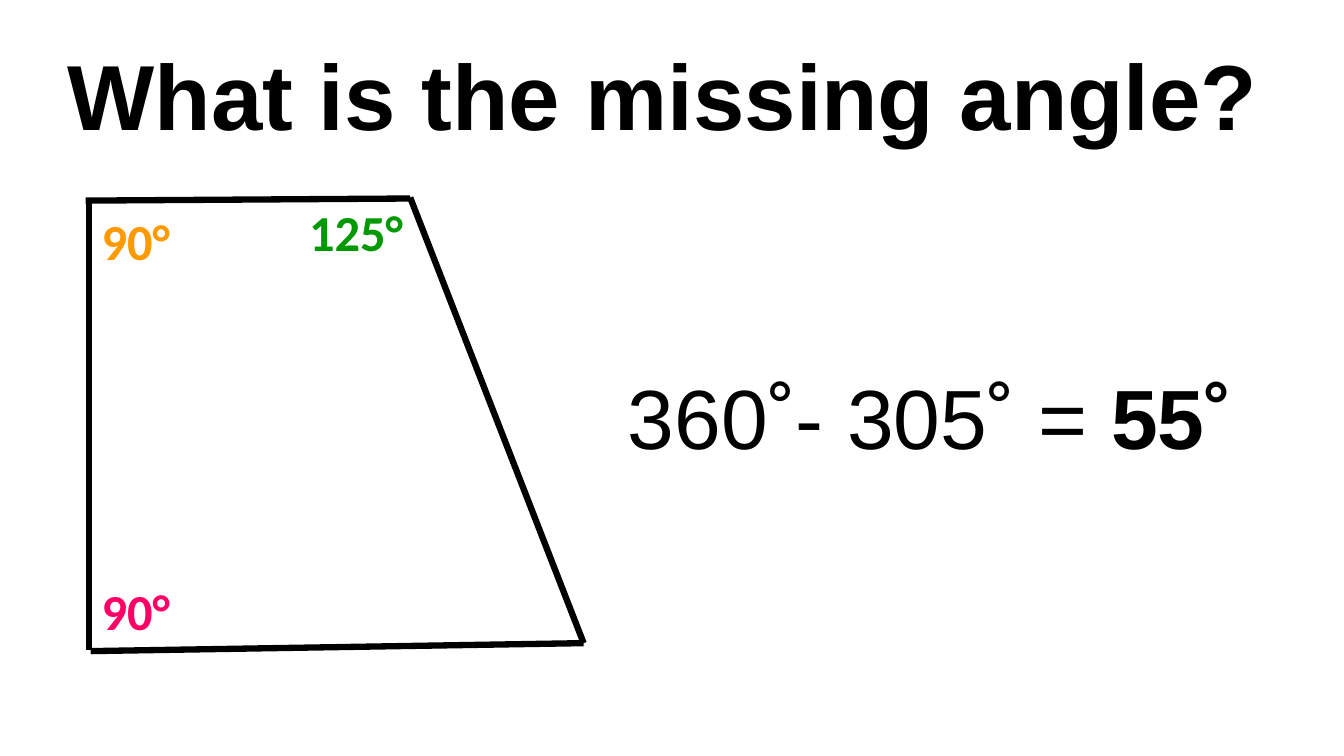
from pptx import Presentation
from pptx.dml.color import RGBColor
from pptx.enum.shapes import MSO_CONNECTOR
from pptx.enum.text import MSO_ANCHOR, MSO_AUTO_SIZE, PP_ALIGN
from pptx.oxml.ns import qn
from pptx.util import Pt
from lxml.etree import SubElement

COLOURS = {"black": "000000", "pink": "FF0066", "orange": "FF9900", "green": "009900"}


def format_font(font, name, size, colour, bold=None):
    font.name = name
    font.size = Pt(size)
    font.bold = bold
    font.color.rgb = RGBColor.from_string(COLOURS[colour])


presentation = Presentation()
presentation.slide_width = Pt(960)
presentation.slide_height = Pt(540)
slide = presentation.slides.add_slide(presentation.slide_layouts[5])

# Trapezium with its known angles
trapezium = slide.shapes.add_group_shape()
sides = [
    (63.4, 142, 63.4, 464.4),
    (61.2, 143.3, 293, 141.8),
    (293, 141.1, 416.9, 459.4),
    (416.9, 459.4, 64.8, 465.1),
]
for side in sides:
    line = trapezium.shapes.add_connector(MSO_CONNECTOR.STRAIGHT, *map(Pt, side))
    line.line.width = Pt(4.5)
    line.line.color.rgb = RGBColor.from_string(COLOURS["black"])
    SubElement(line._element.spPr, qn("a:effectLst"))

angles = [
    ("90°", "pink", 65.5, 411.1, 85.7, 68.4),
    ("90°", "orange", 65.5, 146.2, 69.8, 51.1),
    ("125°", "green", 213.8, 140.4, 94.3, 51.1),
]
for text, colour, left, top, width, height in angles:
    label = trapezium.shapes.add_textbox(Pt(left), Pt(top), Pt(width), Pt(height))
    label.text_frame.word_wrap = True
    paragraph = label.text_frame.paragraphs[0]
    paragraph.text = text
    format_font(paragraph.font, "Calibri", 36, colour, bold=True)

# Calculation with the answer in bold
calculation = slide.shapes.add_textbox(Pt(441.4), Pt(257.8), Pt(467.3), Pt(79.9))
calculation.text_frame.word_wrap = True
paragraph = calculation.text_frame.paragraphs[0]
format_font(paragraph.font, "Arial", 60, "black")
paragraph.add_run().text = "360˚- 305˚ = "
answer = paragraph.add_run()
answer.text = "55˚"
answer.font.bold = True

# Title, centred a little left of the middle of its box
title = slide.shapes.title
title.left, title.top, title.width, title.height = Pt(36.7), Pt(23.8), Pt(912.2), Pt(87.1)
frame = title.text_frame
frame.word_wrap = True
frame.auto_size = MSO_AUTO_SIZE.SHAPE_TO_FIT_TEXT
frame.vertical_anchor = MSO_ANCHOR.TOP
frame.margin_left = Pt(0)
frame.margin_right = Pt(38)
paragraph = frame.paragraphs[0]
paragraph.text = "What is the missing angle?"
paragraph.alignment = PP_ALIGN.CENTER
format_font(paragraph.font, "Arial", 66, "black", bold=True)

presentation.save("out.pptx")
